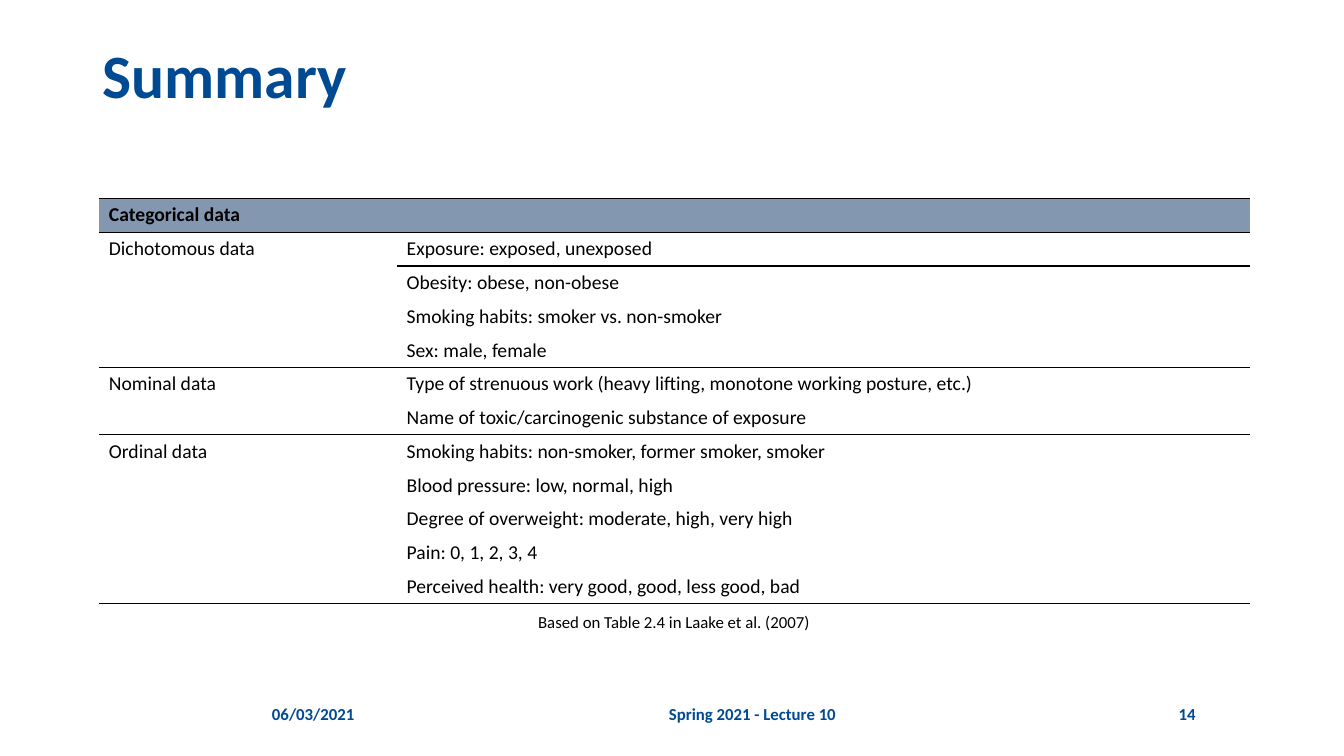
import pptx
import pptx.util
import pptx.dml.color
import pptx.enum.text
from lxml import etree

Pt = pptx.util.Pt
Rgb = pptx.dml.color.RGBColor.from_string
Align = pptx.enum.text.PP_ALIGN
Anchor = pptx.enum.text.MSO_ANCHOR

TITLE = "Summary"
HEAD = "Categorical data"
GROUPS = [
    ("Dichotomous data", [
        "Exposure: exposed, unexposed",
        "Obesity: obese, non-obese",
        "Smoking habits: smoker vs. non-smoker",
        "Sex: male, female"]),
    ("Nominal data", [
        "Type of strenuous work (heavy lifting, monotone working posture, etc.)",
        "Name of toxic/carcinogenic substance of exposure"]),
    ("Ordinal data", [
        "Smoking habits: non-smoker, former smoker, smoker",
        "Blood pressure: low, normal, high",
        "Degree of overweight: moderate, high, very high",
        "Pain: 0, 1, 2, 3, 4",
        "Perceived health: very good, good, less good, bad"]),
]
NOTE = ("Based on Table 2.4 in Laake et al. (2007)", (354, 430.5, 255, 28), Align.CENTER)
FOOT = [
    ("06/03/2021", (187.2, 495.4, 94.3, 28.8), Align.LEFT),
    ("Spring 2021 - Lecture 10", (293, 495.4, 489, 28.8), Align.CENTER),
    ("14", (793.4, 495.4, 67.7, 28.8), Align.RIGHT),
]
THEME = dict(font="Calibri", blue="004A93", ink="000000", head="8497B0",
             big=44, mid=14, small=12, rule=1)
COLS = (212.7, 609.3)
LEFT, TOP, ROW = 70.6, 141.7, 24.13


def write(frame, text, size="mid", color="ink", bold=False, align=Align.LEFT,
          anchor=Anchor.MIDDLE, space=None):
    frame.word_wrap = True
    frame.vertical_anchor = anchor
    para = frame.paragraphs[0]
    para.alignment = align
    para.line_spacing = space
    run = para.add_run()
    run.text = text
    font = run.font
    font.name, font.size, font.bold = THEME["font"], Pt(THEME[size]), bold
    font.color.rgb = Rgb(THEME[color])


def label(slide, text, box, align, **style):
    shape = slide.shapes.add_textbox(*map(Pt, box))
    write(shape.text_frame, text, size="small", align=align, **style)


def edge(cell, sides):
    space = "{http://schemas.openxmlformats.org/drawingml/2006/main}"
    props = cell._tc.get_or_add_tcPr()
    for spot, side in enumerate("LRTB"):
        line = etree.Element(space + "ln" + side, w=str(Pt(THEME["rule"])))
        if side in sides:
            fill = etree.SubElement(line, space + "solidFill")
            etree.SubElement(fill, space + "srgbClr", val=THEME["ink"])
        else:
            etree.SubElement(line, space + "noFill")
        props.insert(spot, line)


def build(slide):
    rows, ends = [(HEAD, "")], {0}
    for name, items in GROUPS:
        rows += [(name if i == 0 else "", item) for i, item in enumerate(items)]
        ends.add(len(rows) - 1)
    rules = {(end, col) for end in ends | {-1} for col in (0, 1)} | {(1, 1)}
    frame = slide.shapes.add_table(len(rows), len(COLS), Pt(LEFT), Pt(TOP),
                                   Pt(sum(COLS)), Pt(ROW * len(rows)))
    table = frame.table
    table.first_row = table.horz_banding = False
    for col, width in enumerate(COLS):
        table.columns[col].width = Pt(width)
    for row, texts in enumerate(rows):
        table.rows[row].height = Pt(ROW)
        for col, text in enumerate(texts):
            cell = table.cell(row, col)
            cell.margin_top = cell.margin_bottom = Pt(3 if text else 0)
            cell.vertical_anchor = Anchor.MIDDLE
            if row == 0:
                cell.fill.solid()
                cell.fill.fore_color.rgb = Rgb(THEME["head"])
            else:
                cell.fill.background()
            edge(cell, [side for side, spot in (("T", row - 1), ("B", row))
                        if (spot, col) in rules])
            if text:
                write(cell.text_frame, text, bold=row == 0)


def main():
    deck = pptx.Presentation()
    deck.slide_width, deck.slide_height = Pt(960), Pt(540)
    slide = deck.slides.add_slide(deck.slide_layouts[5])
    title = slide.shapes.title
    title.left, title.top, title.width, title.height = map(Pt, (66, 28.8, 828, 104.4))
    write(title.text_frame, TITLE, size="big", color="blue", bold=True,
          anchor=Anchor.TOP, space=0.9)
    build(slide)
    for item in FOOT:
        label(slide, *item, color="blue", bold=True)
    label(slide, *NOTE)
    deck.save("out.pptx")


if __name__ == "__main__":
    main()
